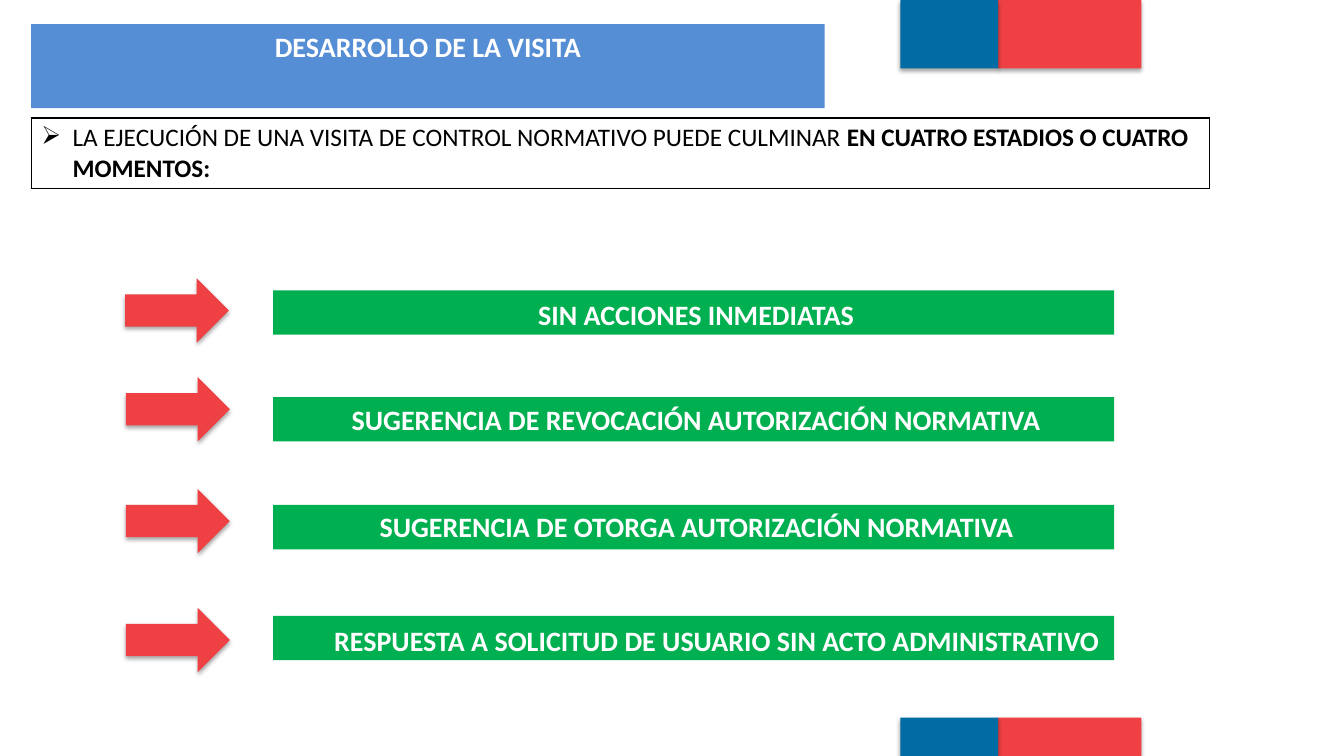
from lxml.etree import SubElement
from pptx import Presentation
from pptx.dml.color import RGBColor
from pptx.enum.shapes import MSO_SHAPE as Shape
from pptx.enum.text import MSO_ANCHOR as Anchor, MSO_AUTO_SIZE as Auto, PP_ALIGN as Align
from pptx.oxml.ns import qn
from pptx.util import Inches, Pt

COLORS = {"white": "FFFFFF", "black": "000000", "title": "558ED5",
          "green": "00B050", "red": "EF4144", "blue": "006CA3"}
FONT = "Calibri"
TITLE = "DESARROLLO DE LA VISITA"
INTRO = [("LA EJECUCIÓN DE UNA VISITA DE CONTROL NORMATIVO PUEDE CULMINAR ", False),
         ("EN CUATRO ESTADIOS O CUATRO MOMENTOS:", True)]
# label, bar top, arrow left and top, label left, top and width
STAGES = [
    ("SIN ACCIONES INMEDIATAS", 2.88, (1.24, 2.76), (3.44, 2.9, 6.93)),
    ("SUGERENCIA DE REVOCACIÓN AUTORIZACIÓN NORMATIVA", 3.94, (1.25, 3.74), (3.18, 3.94, 7.45)),
    ("SUGERENCIA DE OTORGA AUTORIZACIÓN NORMATIVA", 5.01, (1.25, 4.85), (3.45, 5.01, 6.92)),
    ("RESPUESTA A SOLICITUD DE USUARIO SIN ACTO ADMINISTRATIVO", 6.11, (1.25, 6.03),
     (3.18, 6.14, 7.86)),
]
FLAGS = [(0, 0.68), (7.12, 0.38)]  # top, height
FLAG_PARTS = [("red", 9.9, 1.42), ("blue", 8.93, 0.97)]  # colour, left, width
BAR_H = 0.44


def rgb(name):
    return RGBColor.from_string(COLORS[name])


def box(*sizes):
    return [Inches(n) for n in sizes]


def write(para, text, size=20, color="white", bold=True, align=Align.CENTER):
    para.alignment = align
    run = para.add_run()
    run.text = text
    font = run.font
    font.name, font.size, font.bold = FONT, Pt(size), bold
    font.color.rgb = rgb(color)


def draw(shapes, kind, place, color, shadow=False):
    shape = shapes.add_shape(kind, *box(*place))
    shape.fill.solid()
    shape.fill.fore_color.rgb = rgb(color)
    shape.line.fill.background()
    shape.shadow.inherit = False
    if shadow:
        effects = shape.element.spPr.find(qn("a:effectLst"))
        outer = SubElement(effects, qn("a:outerShdw"), blurRad="40000", dist="23000",
                           dir="5400000", rotWithShape="0")
        tint = SubElement(outer, qn("a:srgbClr"), val=COLORS["black"])
        SubElement(tint, qn("a:alpha"), val="35000")
    return shape


def add_title(slide):
    title = slide.shapes.title
    title.left, title.top, title.width, title.height = box(0.31, 0.24, 7.87, BAR_H)
    title.fill.solid()
    title.fill.fore_color.rgb = rgb("title")
    frame = title.text_frame
    frame.word_wrap, frame.auto_size = True, Auto.SHAPE_TO_FIT_TEXT
    frame.vertical_anchor = Anchor.TOP
    write(frame.paragraphs[0], TITLE)


def add_intro(shapes):
    table = shapes.add_table(1, 1, *box(0.31, 1.17, 11.69, 0.7)).table
    table.first_row = table.horz_banding = False
    cell = table.cell(0, 0)
    props = cell._tc.get_or_add_tcPr()
    for side in ("lnL", "lnR", "lnT", "lnB"):
        line = SubElement(props, qn("a:" + side), w=str(Pt(1)))
        fill = SubElement(line, qn("a:solidFill"))
        SubElement(fill, qn("a:srgbClr"), val=COLORS["black"])
    cell.fill.background()
    para = cell.text_frame.paragraphs[0]
    for text, bold in INTRO:
        write(para, text, size=18, color="black", bold=bold, align=Align.LEFT)
    format = para._p.get_or_add_pPr()
    indent = Inches(0.31)
    format.set("marL", str(indent))
    format.set("indent", str(-indent))
    SubElement(format, qn("a:buChar"), char="➢")


def add_stage(shapes, label, top, arrow, place):
    draw(shapes, Shape.RECTANGLE, (2.71, top, 8.34, BAR_H), "green")
    draw(shapes, Shape.RIGHT_ARROW, (*arrow, 1.03, 0.64), "red", shadow=True)
    frame = shapes.add_textbox(*box(*place, BAR_H)).text_frame
    frame.word_wrap, frame.auto_size = True, Auto.SHAPE_TO_FIT_TEXT
    write(frame.paragraphs[0], label)


def main():
    deck = Presentation()
    deck.slide_width, deck.slide_height = box(13.33, 7.5)
    slide = deck.slides.add_slide(deck.slide_layouts[5])
    add_title(slide)
    for top, height in FLAGS:
        flag = slide.shapes.add_group_shape()
        for color, left, width in FLAG_PARTS:
            draw(flag.shapes, Shape.RECTANGLE, (left, top, width, height), color, shadow=True)
    add_intro(slide.shapes)
    for stage in STAGES:
        add_stage(slide.shapes, *stage)
    deck.save("out.pptx")


if __name__ == "__main__":
    main()
